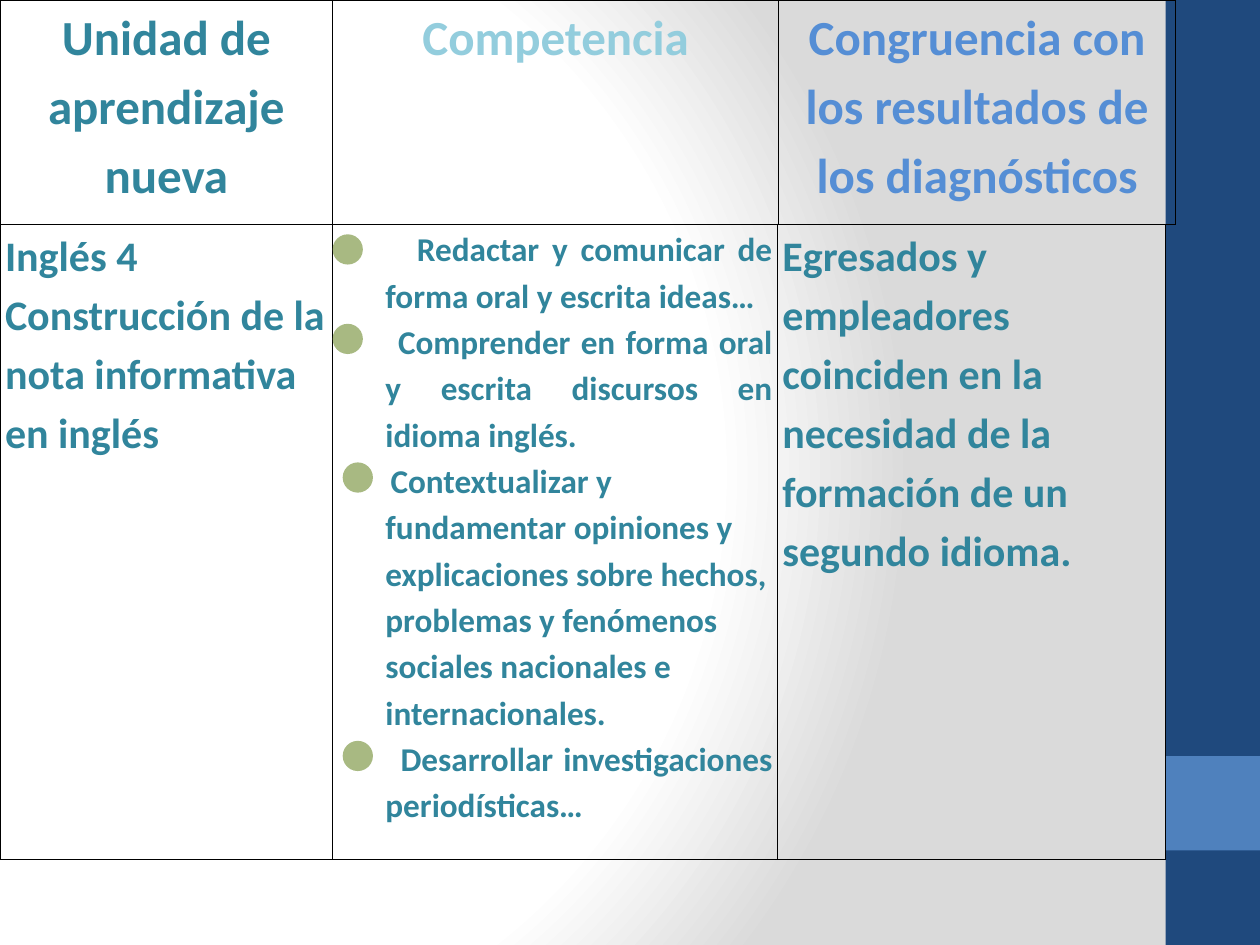
"""Build the slide that relates a new learning unit to its competencies and diagnostics."""
from dataclasses import dataclass

from pptx import Presentation
from pptx.dml.color import RGBColor
from pptx.enum.shapes import MSO_SHAPE
from pptx.enum.text import PP_ALIGN
from pptx.oxml import parse_xml
from pptx.oxml.ns import nsdecls, qn
from pptx.util import Inches, Pt

RECTANGLE, OVAL = MSO_SHAPE.RECTANGLE, MSO_SHAPE.OVAL
LEFT, CENTER, JUSTIFY = PP_ALIGN.LEFT, PP_ALIGN.CENTER, PP_ALIGN.JUSTIFY
BLANK_LAYOUT = 6
GRID_COLUMNS, GRID_ROWS = 10, 7.5


@dataclass(frozen=True)
class Theme:
    """Colours, font and type sizes of the slide."""

    font: str = "Calibri"
    navy: str = "1F497D"
    blue: str = "4F81BD"
    teal: str = "31859C"
    aqua: str = "93CDDD"
    sky: str = "558ED5"
    olive: str = "77933C"
    white: str = "FFFFFF"
    grey: str = "DADADA"
    border: str = "000000"
    heading: int = 28
    body: int = 24
    detail: int = 19
    spacing: float = 1.15


class SlideBuilder:
    """Draw themed elements on one slide, measured in grid columns and rows."""

    def __init__(self, deck, theme):
        """Add a blank slide to the deck."""
        self.theme = theme
        self.column = deck.slide_width / GRID_COLUMNS
        self.row = deck.slide_height / GRID_ROWS
        self.slide = deck.slides.add_slide(deck.slide_layouts[BLANK_LAYOUT])

    def place(self, left, top, width, height):
        """Turn grid units into slide lengths."""
        scales = (self.column, self.row) * 2
        return [int(n * scale) for n, scale in zip((left, top, width, height), scales)]

    def background(self, stops, focus):
        """Fill the background with a radial gradient."""
        marks = "".join(
            f'<a:gs pos="{position * 1000}"><a:srgbClr val="{color}"/></a:gs>'
            for position, color in stops)
        sides = " ".join(f'{side}="{share * 1000}"' for side, share in zip("ltrb", focus))
        self.slide.element.cSld.insert(0, parse_xml(
            f'<p:bg {nsdecls("p", "a")}><p:bgPr><a:gradFill rotWithShape="1">'
            f'<a:gsLst>{marks}</a:gsLst><a:path path="circle"><a:fillToRect {sides}/></a:path>'
            '</a:gradFill><a:effectLst/></p:bgPr></p:bg>'))

    def shape(self, kind, box, color, opacity=100):
        """Add a plain filled shape without outline."""
        shape = self.slide.shapes.add_shape(kind, *self.place(*box))
        shape.shadow.inherit = False
        shape.line.fill.background()
        shape.fill.solid()
        shape.fill.fore_color.rgb = RGBColor.from_string(color)
        if opacity < 100:
            tint = shape.fill._xPr.find(f'{qn("a:solidFill")}/{qn("a:srgbClr")}')
            tint.append(parse_xml(f'<a:alpha {nsdecls("a")} val="{opacity * 1000}"/>'))

    def table(self, top, height, widths, cells):
        """Add a one-row bordered table, each cell a list of paragraph formats."""
        frame = self.slide.shapes.add_table(
            1, len(widths), *self.place(0, top, sum(widths), height))
        table = frame.table
        table.first_row = table.horz_banding = False
        for index, (width, paragraphs) in enumerate(zip(widths, cells)):
            table.columns[index].width = int(width * self.column)
            self.cell(table.cell(0, index), paragraphs)

    def cell(self, cell, paragraphs):
        """Write the paragraphs of a cell and draw its borders."""
        side = int(0.04 * self.column)
        margins = {"margin_left": side, "margin_right": side,
                   "margin_top": 0, "margin_bottom": 0}
        for name, value in margins.items():
            setattr(cell, name, value)
        cell.fill.background()
        for order, edge in enumerate("LRTB"):
            cell._tc.tcPr.insert(order, parse_xml(
                f'<a:ln{edge} {nsdecls("a")} w="{Pt(1)}"><a:solidFill>'
                f'<a:srgbClr val="{self.theme.border}"/></a:solidFill></a:ln{edge}>'))
        frame = cell.text_frame
        for index, paragraph_format in enumerate(paragraphs):
            paragraph = frame.add_paragraph() if index else frame.paragraphs[0]
            self.paragraph(paragraph, **paragraph_format)

    def paragraph(self, paragraph, text, size, color, align=LEFT, margin=0, indent=0):
        """Write one bold paragraph."""
        paragraph.alignment = align
        paragraph.line_spacing = self.theme.spacing
        for name, value in {"marL": margin, "indent": indent}.items():
            paragraph._p.get_or_add_pPr().set(name, str(int(value * self.column)))
        run = paragraph.add_run()
        run.text = text
        style = {"name": self.theme.font, "size": Pt(size), "bold": True}
        for name, value in style.items():
            setattr(run.font, name, value)
        run.font.color.rgb = RGBColor.from_string(color)


def main():
    """Build and save the slide."""
    theme = Theme()
    deck = Presentation()
    deck.slide_width, deck.slide_height = Inches(10), Inches(7.5)
    builder = SlideBuilder(deck, theme)

    builder.background(
        [(0, theme.white), (75, theme.white), (100, theme.grey)], (20, 50, 100, 50))
    builder.shape(RECTANGLE, (9.25, 0, 0.75, GRID_ROWS), theme.navy)
    builder.shape(RECTANGLE, (9.25, 6, 0.75, 0.75), theme.blue)

    headings = [
        ("Unidad de aprendizaje nueva", theme.teal),
        ("Competencia", theme.aqua),
        ("Congruencia con los resultados de los diagnósticos", theme.sky),
    ]
    competencies = [
        ("Redactar y comunicar de forma oral y escrita ideas…", JUSTIFY, 0.25),
        ("Comprender en forma oral y escrita discursos en idioma inglés.", JUSTIFY, 0.1),
        ("Contextualizar y fundamentar opiniones y explicaciones sobre hechos, "
         "problemas y fenómenos sociales nacionales e internacionales.", LEFT, 0.04),
        ("Desarrollar investigaciones periodísticas…", JUSTIFY, 0.12),
    ]
    body = {"size": theme.body, "color": theme.teal}
    detail = {"size": theme.detail, "color": theme.teal, "margin": 0.38}
    unit = ["Inglés 4", "Construcción de la nota informativa en inglés"]
    diagnosis = ("Egresados y empleadores coinciden en la necesidad "
                 "de la formación de un segundo idioma.")
    heading_height = 1.78

    builder.table(heading_height, 5.04, (2.64, 3.53, 3.08), [
        [{"text": line, **body} for line in unit],
        [{"text": text, "align": align, "indent": indent, **detail}
         for text, align, indent in competencies],
        [{"text": diagnosis, **body}],
    ])
    builder.table(0, heading_height, (2.64, 3.54, 3.15), [
        [{"text": text, "size": theme.heading, "color": color, "align": CENTER}]
        for text, color in headings
    ])
    for left, top in ((2.64, 1.86), (2.64, 2.57), (2.72, 3.67), (2.72, 5.88)):
        builder.shape(OVAL, (left, top, 0.24, 0.24), theme.olive, opacity=64)

    deck.save("out.pptx")


if __name__ == "__main__":
    main()
